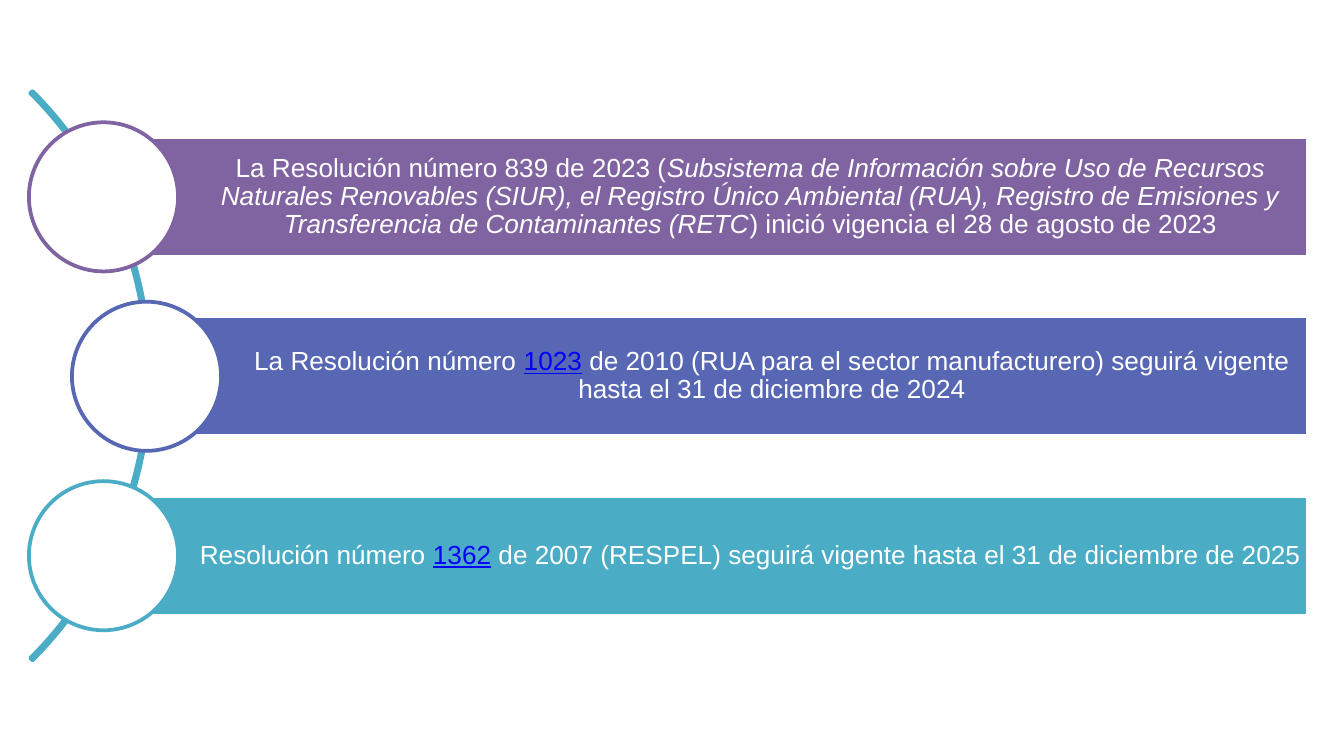
from pptx import Presentation
from pptx.dml.color import RGBColor
from pptx.enum import shapes, text
from pptx.util import Inches, Pt

WHITE, PURPLE, INDIGO, TEAL, LINK = "FFFFFF", "8064A2", "5767B4", "4BACC6", "0000FF"

# Content: accent colour, bar left, runs of (text, format)
ITALIC = {"italic": True}
LINKED = {"color": LINK, "underline": True}
RESOLUTIONS = [
    (PURPLE, 0.77, [
        ("La Resolución número 839 de 2023 (", {}),
        ("Subsistema de Información sobre Uso de Recursos Naturales Renovables (SIUR), "
         "el Registro Único Ambiental (RUA), Registro de Emisiones y Transferencia de "
         "Contaminantes (RETC", ITALIC),
        (") inició vigencia el 28 de agosto de 2023", {})]),
    (INDIGO, 1.09, [
        ("La Resolución número ", {}),
        ("1023", LINKED),
        (" de 2010 (RUA para el sector manufacturero) seguirá vigente hasta el "
         "31 de diciembre de 2024", {})]),
    (TEAL, 0.77, [
        ("Resolución número ", {}),
        ("1362", LINKED),
        (" de 2007 (RESPEL) seguirá vigente hasta el 31 de diciembre de 2025", {})]),
]

# Layout in inches
BAR_RIGHT, BAR_HEIGHT = 9.73, 0.89
FIRST_TOP, LAST_TOP = 1.02, 3.69
PITCH = (LAST_TOP - FIRST_TOP) / (len(RESOLUTIONS) - 1)
CIRCLE = 1.11


def rgb(color):
    return RGBColor.from_string(color)


def add_shape(slide, kind, left, top, width, height, line, fill=None):
    shape = slide.shapes.add_shape(
        kind, Inches(left), Inches(top), Inches(width), Inches(height))
    shape.shadow.inherit = False
    if fill:
        shape.fill.solid()
        shape.fill.fore_color.rgb = rgb(fill)
    else:
        shape.fill.background()
    shape.line.color.rgb = rgb(line)
    shape.line.width = Pt(2)
    return shape


def add_text(paragraph, content, color=WHITE, size=14, italic=False, underline=False):
    run = paragraph.add_run()
    run.text = content
    font = run.font
    font.name, font.size = "Arial", Pt(size)
    font.italic, font.underline = italic, underline
    font.color.rgb = rgb(color)


def add_label(slide, left, top, width, height, runs):
    label = slide.shapes.add_textbox(
        Inches(left), Inches(top), Inches(width), Inches(height))
    frame = label.text_frame
    frame.word_wrap = True
    frame.vertical_anchor = text.MSO_ANCHOR.MIDDLE
    frame.margin_left = Inches(0.71)
    frame.margin_right = frame.margin_top = frame.margin_bottom = Inches(0.04)
    paragraph = frame.paragraphs[0]
    paragraph.alignment = text.PP_ALIGN.CENTER
    paragraph.line_spacing = 0.9
    for content, style in runs:
        add_text(paragraph, content, **style)


def main():
    # Widescreen 16:9
    presentation = Presentation()
    presentation.slide_width = Inches(10)
    presentation.slide_height = Inches(10 * 9 / 16)
    slide = presentation.slides.add_slide(presentation.slide_layouts[6])

    # Arc behind the rows: start angle, end angle, thickness
    arc = add_shape(slide, shapes.MSO_SHAPE.BLOCK_ARC, -4.87, -0.2, 5.99, 5.99, TEAL)
    for index, value in enumerate((189, 27, 0.004)):
        arc.adjustments[index] = value

    # One bar per resolution, with a circle centred on its left edge
    for row, (color, left, runs) in enumerate(RESOLUTIONS):
        top = FIRST_TOP + row * PITCH
        bar = left, top, BAR_RIGHT - left, BAR_HEIGHT
        add_shape(slide, shapes.MSO_SHAPE.RECTANGLE, *bar, WHITE, color)
        add_label(slide, *bar, runs)
        add_shape(slide, shapes.MSO_SHAPE.OVAL, left - CIRCLE / 2,
                  top + (BAR_HEIGHT - CIRCLE) / 2, CIRCLE, CIRCLE, color, WHITE)

    presentation.save("out.pptx")


if __name__ == "__main__":
    main()
